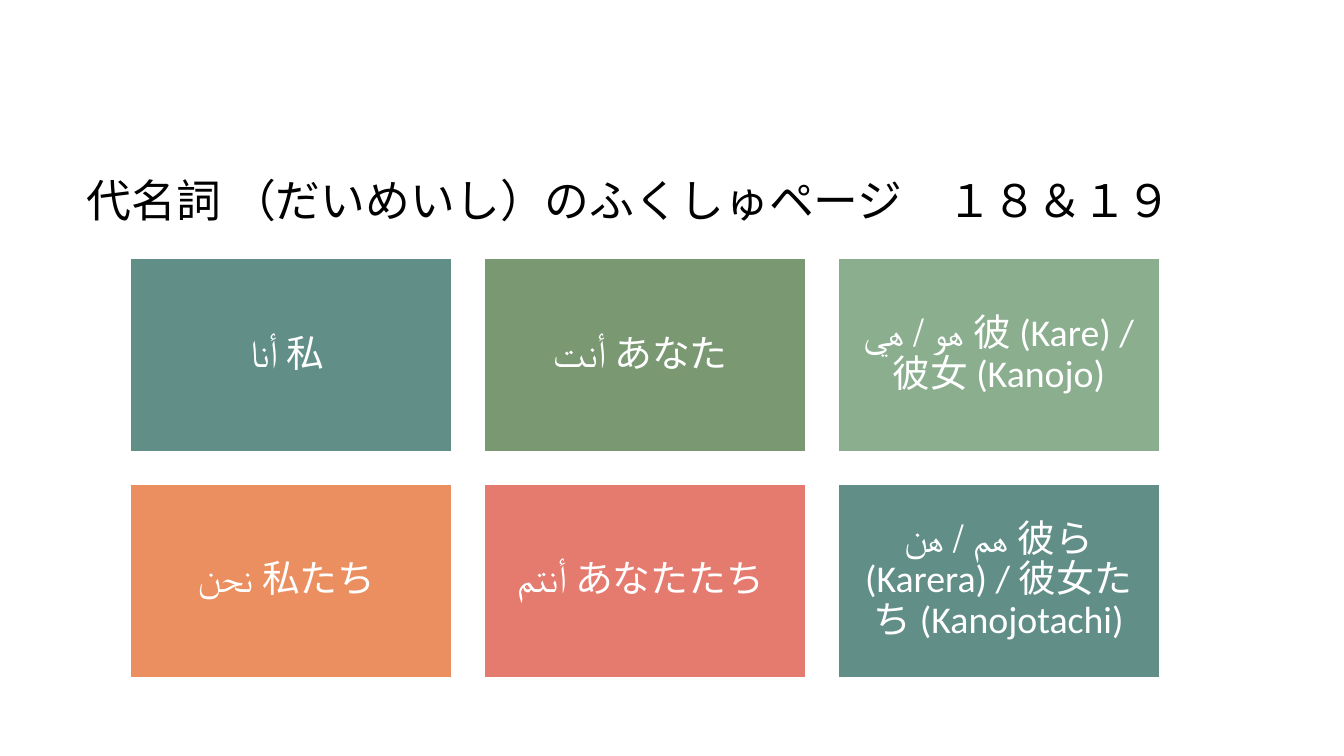
from dataclasses import dataclass

from pptx import Presentation
from pptx.dml.color import RGBColor
from pptx.enum.shapes import MSO_SHAPE
from pptx.enum.text import MSO_ANCHOR, MSO_AUTO_SIZE, PP_ALIGN
from pptx.slide import Slide
from pptx.text.text import TextFrame
from pptx.util import Inches, Pt

RECTANGLE = MSO_SHAPE.RECTANGLE
MIDDLE, BOTTOM = MSO_ANCHOR.MIDDLE, MSO_ANCHOR.BOTTOM
LEFT, CENTER = PP_ALIGN.LEFT, PP_ALIGN.CENTER
NO_AUTOFIT = MSO_AUTO_SIZE.NONE

BLACK = RGBColor(0x00, 0x00, 0x00)
WHITE = RGBColor(0xFF, 0xFF, 0xFF)
TEAL = RGBColor(0x61, 0x8F, 0x88)
OLIVE = RGBColor(0x7A, 0x99, 0x73)
SAGE = RGBColor(0x8A, 0xAE, 0x8E)
ORANGE = RGBColor(0xEB, 0x8F, 0x60)
CORAL = RGBColor(0xE5, 0x7A, 0x6F)

FONT = "Calibri"
COLUMNS = 3
GRID_LEFT, GRID_TOP = 1.29, 2.56
CARD_WIDTH, CARD_HEIGHT = 3.19, 1.92
GAP = 0.32
INSET = Inches(0.11)

TITLE = "代名詞 （だいめいし）のふくしゅページ　１８＆１９"
TITLE_BOX = {
    "left": Inches(0.76),
    "top": Inches(0.79),
    "width": Inches(11.29),
    "height": Inches(1.51),
}
TITLE_FRAME = {"vertical_anchor": BOTTOM, "word_wrap": True, "auto_size": NO_AUTOFIT}
TITLE_FONT = {"name": FONT, "size": Pt(32)}
CARD_FRAME = {
    "vertical_anchor": MIDDLE,
    "word_wrap": True,
    "margin_left": INSET,
    "margin_top": INSET,
    "margin_right": INSET,
    "margin_bottom": INSET,
}
CARD_FONT = {"name": FONT, "size": Pt(27)}


@dataclass(frozen=True)
class PronounCard:
    text: str
    fill: RGBColor


CARDS = [
    PronounCard("أنا 私 ", TEAL),
    PronounCard("أنت あなた ", OLIVE),
    PronounCard("هو / هي 彼 (Kare) / 彼女 (Kanojo)", SAGE),
    PronounCard("نحن 私たち ", ORANGE),
    PronounCard("أنتم あなたたち ", CORAL),
    PronounCard("هم / هن 彼ら (Karera) / 彼女たち (Kanojotachi)", TEAL),
]


def apply(target: object, values: dict) -> None:
    for name, value in values.items():
        setattr(target, name, value)


def write(tf: TextFrame, text: str, frame: dict, font: dict,
          color: RGBColor, alignment: PP_ALIGN) -> None:
    apply(tf, frame)
    p = tf.paragraphs[0]
    apply(p, {"alignment": alignment, "line_spacing": 0.9})
    r = p.add_run()
    r.text = text
    apply(r.font, font)
    r.font.color.rgb = color


def add_title(s: Slide) -> None:
    sp = s.shapes.title
    apply(sp, TITLE_BOX)
    write(sp.text_frame, TITLE, TITLE_FRAME, TITLE_FONT, BLACK, LEFT)


def add_card(s: Slide, index: int, card: PronounCard) -> None:
    row, column = divmod(index, COLUMNS)
    sp = s.shapes.add_shape(
        RECTANGLE,
        Inches(GRID_LEFT + column * (CARD_WIDTH + GAP)),
        Inches(GRID_TOP + row * (CARD_HEIGHT + GAP)),
        Inches(CARD_WIDTH),
        Inches(CARD_HEIGHT),
    )
    sp.shadow.inherit = False
    sp.fill.solid()
    sp.fill.fore_color.rgb = card.fill
    sp.line.color.rgb = WHITE
    sp.line.width = Pt(1)
    write(sp.text_frame, card.text, CARD_FRAME, CARD_FONT, WHITE, CENTER)


def main() -> None:
    prs = Presentation()
    prs.slide_width, prs.slide_height = Inches(13.33), Inches(7.5)
    s = prs.slides.add_slide(prs.slide_layouts[5])
    add_title(s)
    for index, card in enumerate(CARDS):
        add_card(s, index, card)
    prs.save("out.pptx")


if __name__ == "__main__":
    main()
